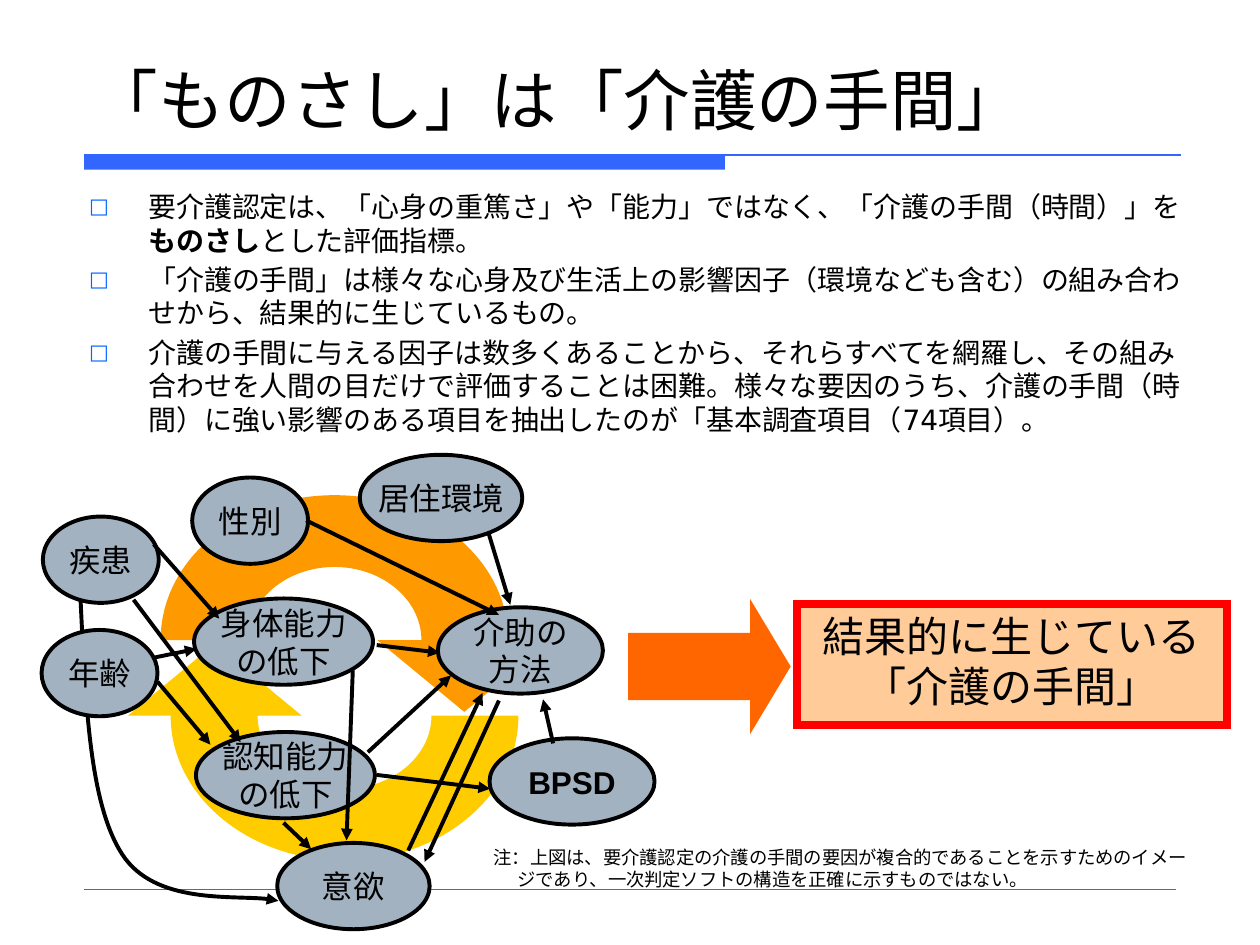
import pptx
import pptx.util
import pptx.dml.color
import pptx.enum.shapes
import pptx.enum.text
import pptx.oxml
import pptx.oxml.ns
from lxml import etree

Kind = pptx.enum.shapes.MSO_SHAPE
Align = pptx.enum.text.PP_ALIGN
Anchor = pptx.enum.text.MSO_ANCHOR
Pt = pptx.util.Pt
qn = pptx.oxml.ns.qn


def color(text):
    return pptx.dml.color.RGBColor.from_string(text)


class Board:
    cols, rows = 100, 75
    ink, node, blue = "000000", "A3B2C1", "3366FF"
    sans, body = "Arial", "DejaVu Sans"
    stroke = 2.25

    def __init__(self, deck):
        self.cell = deck.slide_width / self.cols
        self.slide = deck.slides.add_slide(deck.slide_layouts[6])
        self.shapes = self.slide.shapes

    def size(self, *cells):
        return [round(n * self.cell) for n in cells]

    def paint(self, shape, fill=None, line=None, width=stroke):
        shape.shadow.inherit = False
        if fill:
            shape.fill.solid()
            shape.fill.fore_color.rgb = color(fill)
        else:
            shape.fill.background()
        if line:
            shape.line.color.rgb = color(line)
            shape.line.width = Pt(width)
        else:
            shape.line.fill.background()
        return shape

    def edge(self, shape, tag, **traits):
        etree.SubElement(shape.line._get_or_add_ln(), qn(tag), **traits)

    def head(self, shape):
        self.edge(shape, "a:tailEnd", type="triangle")

    def style(self, para, size, font, bold=None):
        para.font.size = Pt(size)
        para.font.name = font
        para.font.color.rgb = color(self.ink)
        para.font.bold = bold

    def shape(self, kind, box, fill, line=None, width=stroke):
        return self.paint(self.shapes.add_shape(kind, *self.size(*box)), fill, line, width)

    def label(self, shape, text, size, anchor, wrap, bold=None):
        frame = shape.text_frame
        frame.word_wrap = wrap
        frame.vertical_anchor = anchor
        para = frame.paragraphs[0]
        para.text = text
        para.alignment = Align.CENTER
        self.style(para, size, self.sans, bold)

    def oval(self, text, x, y, w, bold=None):
        shape = self.shape(Kind.OVAL, (x, y, w, 6.85), self.node, self.ink)
        self.label(shape, text, 18, Anchor.MIDDLE, False, bold)

    def line(self, ends, tint=ink, width=stroke, head=False):
        join = self.shapes.add_connector(
            pptx.enum.shapes.MSO_CONNECTOR.STRAIGHT, *self.size(*ends))
        join.line.color.rgb = color(tint)
        join.line.width = Pt(width)
        if head:
            self.head(join)
        etree.SubElement(join._element.spPr, qn("a:effectLst"))

    def arrows(self, *group):
        for ends in group:
            self.line(ends, head=True)

    def free(self, points, kinds, close):
        dots = [self.size(*p) for p in points]
        form = self.shapes.build_freeform(*dots[0], scale=1.0)
        form.add_line_segments(dots[1:], close=close)
        shape = form.convert_to_shape()
        steps = iter(list(shape._element.iter(qn("a:lnTo"))))
        for kind in kinds:
            step = next(steps)
            if kind == "C":
                step.addprevious(etree.Element(qn("a:cubicBezTo")))
                bend = step.getprevious()
                for part in (step, next(steps), next(steps)):
                    bend.append(part[0])
                    part.getparent().remove(part)
        return shape

    def swirl(self, x, y, sign, fill):
        points = [(6.9, 0), (6.9, -3.2), (3.8, -5.8), (0, -5.8),
                  (-3.8, -5.8), (-6.9, -3.2), (-6.9, 0), (-13.8, 0),
                  (-13.8, -6.4), (-7.6, -11.5), (0, -11.5),
                  (7.6, -11.5), (13.8, -6.4), (13.8, 0),
                  (17.2, 0), (10.3, 5.7), (3.4, 0)]
        points = [(x + sign * a, y + sign * b) for a, b in points]
        self.paint(self.free(points, "CCLCCLLL", True), fill)

    def sweep(self, *points):
        self.head(self.paint(self.free(points, "CC", False), line=self.ink))

    def text(self, box, paras, size, anchor=Anchor.TOP, indent=(0, 0), gap=0, bullet=None):
        frame = self.shapes.add_textbox(*self.size(*box)).text_frame
        frame.word_wrap = True
        frame.vertical_anchor = anchor
        for i, runs in enumerate(paras):
            para = frame.add_paragraph() if i else frame.paragraphs[0]
            for j, words in enumerate(runs):
                run = para.add_run()
                run.text = words
                if j % 2:
                    run.font.bold = True
            props = para._p.get_or_add_pPr()
            for name, value in zip(("marL", "indent"), self.size(*indent)):
                props.set(name, str(value))
            if bullet:
                tint = etree.SubElement(props, qn("a:buClr"))
                etree.SubElement(tint, qn("a:srgbClr"), val=bullet)
                etree.SubElement(props, qn("a:buSzPct"), val="75000")
                etree.SubElement(props, qn("a:buFont"), typeface=self.body)
                etree.SubElement(props, qn("a:buChar"), char="□")
            para.space_before = Pt(gap)
            self.style(para, size, self.body)


def main():
    deck = pptx.Presentation()
    deck.slide_width = pptx.util.Inches(10)
    deck.slide_height = pptx.util.Inches(7.5)
    board = Board(deck)

    board.shape(Kind.RECTANGLE, (6.67, 12.27, 50.87, 1.2), board.blue)
    board.line((6.67, 12.3, 93.7, 12.3), board.blue, 0.75)
    board.line((6.67, 70.56, 93.3, 70.56), board.blue, 0.25)
    board.text((6.3, 3.3, 87.5, 8.2), [["「ものさし」は「介護の手間」"]], 38, Anchor.BOTTOM)

    board.swirl(26.55, 50.8, 1, "FF9900")
    board.swirl(27.35, 56.8, -1, "FFCC00")

    board.oval("介助の\n方法", 34.75, 48.2, 13.1)
    board.oval("身体能力\nの低下", 15.4, 47.5, 14.2)
    board.oval("認知能力\nの低下", 15.55, 58.1, 14.2)
    board.oval("BPSD", 38.85, 58.6, 13.1, True)
    board.oval("居住環境", 28.55, 36.1, 12.9)
    board.oval("意欲", 22, 66.9, 12.1)
    board.arrows((12.2, 52.2, 15.6, 51.5), (12.5, 54.1, 16.7, 59.1),
                 (22.5, 65.3, 24.7, 67.4))
    board.oval("性別", 15.25, 37.9, 9.2)
    board.arrows((24.3, 41.3, 39.6, 48.8), (29.2, 59.7, 35.8, 53.6),
                 (32.4, 67.5, 38.3, 55), (28, 53.2, 27.5, 66.7),
                 (38.8, 42.4, 40.5, 48), (29.9, 61.5, 38.9, 62.6),
                 (43.9, 59, 43.1, 55.5), (39.6, 55.6, 33.7, 68.4))
    board.oval("疾患", 3.4, 41, 9.2)
    board.arrows((12.2, 43.2, 17.4, 49.1), (10.6, 47.6, 19.1, 58.9))
    board.sweep((6.4, 47.7), (6.8, 55.8), (7.1, 63.8), (9.7, 67.8),
                (12.3, 71.8), (20, 70.9), (22.1, 71.5))
    board.oval("年齢", 3.3, 50, 9.2)

    arrow = board.shape(Kind.RIGHT_ARROW, (49.85, 47.55, 12.9, 10.7), "FF6600")
    arrow.adjustments[0], arrow.adjustments[1] = 0.5, 0.3
    result = board.shape(Kind.RECTANGLE, (63.25, 47.95, 34.1, 9.6), "FFCC99", "FF0000", 4.5)
    board.edge(result, "a:miter", lim="800000")
    board.label(result, "結果的に生じている\n「介護の手間」", 24, Anchor.TOP, True)
    board.arrows((29.9, 51.2, 34.9, 51.8))

    board.text((6.1, 14.55, 90, 25.3), [
        ["要介護認定は、「心身の重篤さ」や「能力」ではなく、「介護の手間（時間）」を",
         "ものさし", "とした評価指標。"],
        ["「介護の手間」は様々な心身及び生活上の影響因子（環境なども含む）の組み合わせから、"
         "結果的に生じているもの。"],
        ["介護の手間に与える因子は数多くあることから、それらすべてを網羅し、その組み合わせを"
         "人間の目だけで評価することは困難。様々な要因のうち、介護の手間（時間）に強い影響の"
         "ある項目を抽出したのが「基本調査項目（74項目）。"],
    ], 16, indent=(4.7, -5.1), gap=3.2, bullet="0066FF")
    board.text((38.2, 66.65, 57.5, 4.7), [
        ["注：上図は、要介護認定の介護の手間の要因が複合的であることを示すためのイメージであり、"
         "一次判定ソフトの構造を正確に示すものではない。"],
    ], 10.5, indent=(1.9, -1.9))
    deck.save("out.pptx")


if __name__ == "__main__":
    main()
